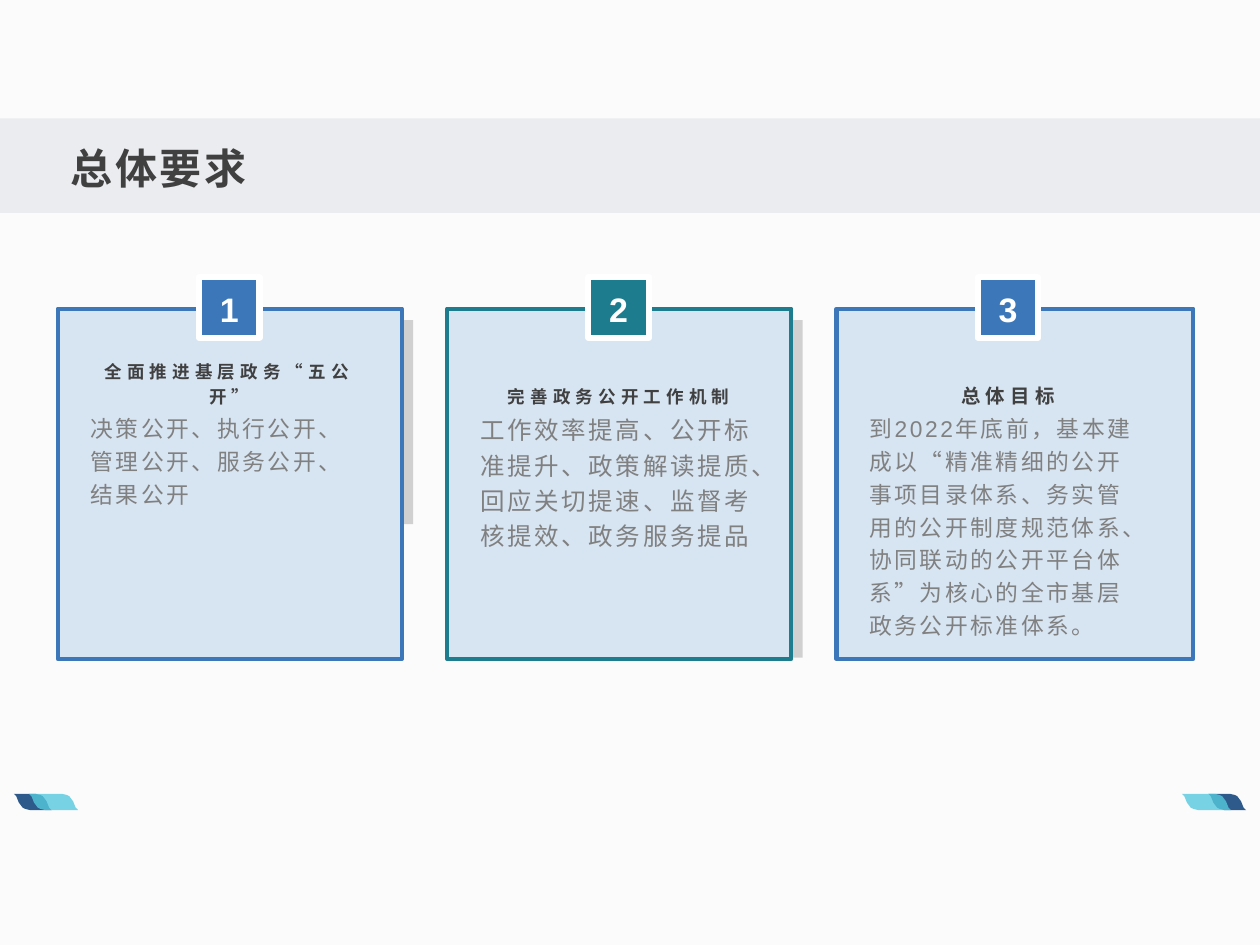
"""Build the slide on general requirements with three numbered cards."""
from lxml import etree
from pptx import Presentation
from pptx.dml.color import RGBColor
from pptx.enum import shapes as kinds, text as txt
from pptx.oxml import ns
from pptx.util import Inches, Pt

PAPER = RGBColor(0xFB, 0xFB, 0xFC)
BAND = RGBColor(0xEA, 0xEC, 0xEF)
NAVY = RGBColor(0x2D, 0x5A, 0x8B)
CYAN = RGBColor(0x56, 0xC8, 0xDD)
SHADE = RGBColor(0xBF, 0xBF, 0xBF)
PALE = RGBColor(0xD7, 0xE4, 0xF2)
BLUE = RGBColor(0x3C, 0x78, 0xB9)
TEAL = RGBColor(0x1D, 0x7D, 0x8E)
WHITE = RGBColor(0xFF, 0xFF, 0xFF)
DARK = RGBColor(0x40, 0x40, 0x40)
GRAY = RGBColor(0x80, 0x80, 0x80)

LEFT, MID = txt.PP_ALIGN.LEFT, txt.PP_ALIGN.CENTER
TOP, LOW = txt.MSO_ANCHOR.TOP, txt.MSO_ANCHOR.BOTTOM

deck = Presentation()
deck.slide_width, deck.slide_height = Inches(10), Inches(7.5)
slide = deck.slides.add_slide(deck.slide_layouts[6])
slide.background.fill.solid()
slide.background.fill.fore_color.rgb = PAPER


def paint(shape, fill, line=None, width=0, alpha=100):
    shape.shadow.inherit = False
    shape.fill.solid()
    shape.fill.fore_color.rgb = fill
    if alpha < 100:
        tint = shape.fill._xPr.find(".//" + ns.qn("a:srgbClr"))
        etree.SubElement(tint, ns.qn("a:alpha"), val=str(alpha * 1000))
    if line is None:
        shape.line.fill.background()
    else:
        shape.line.color.rgb = line
        shape.line.width = Pt(width)


def write(words, box, size, color, bold=False, align=LEFT, anchor=TOP,
          gap=0, lead=1.0, pad=(0.07, 0.04, 0.07, 0.04)):
    frame = slide.shapes.add_textbox(*map(Inches, box)).text_frame
    frame.word_wrap = True
    frame.vertical_anchor = anchor
    (frame.margin_left, frame.margin_top,
     frame.margin_right, frame.margin_bottom) = map(Inches, pad)
    para = frame.paragraphs[0]
    para.alignment, para.line_spacing = align, lead
    run = para.add_run()
    run.text = words
    font = run.font
    font.name, font.size, font.bold = "Arial", Pt(size), bold
    font.color.rgb = color
    props = run._r.get_or_add_rPr()
    props.set("lang", "zh-CN")
    props.set("spc", str(int(gap * 100)))


RECT = kinds.MSO_SHAPE.RECTANGLE
band = slide.shapes.add_shape(RECT, 0, Inches(0.94), Inches(10), Inches(0.75))
paint(band, BAND)

edge = [(0, 0), (0.02, 0.02), (0.04, 0.07), (0.07, 0.11), (0.09, 0.12), (0.13, 0.13)]
leaves = [(0.11, 0.3, NAVY, 100), (0.23, 0.39, CYAN, 80),
          (9.59, 0.3, NAVY, 100), (9.38, 0.39, CYAN, 80)]
for x, wide, color, alpha in leaves:
    dots = [(x + a, 6.3 + b) for a, b in edge]
    dots += [(x + wide - a, 6.43 - b) for a, b in edge]
    dots = [(Inches(a), Inches(b)) for a, b in dots]
    pen = slide.shapes.build_freeform(*dots[0])
    pen.add_line_segments(dots[1:])
    paint(pen.convert_to_shape(), color, alpha=alpha)

write("总体要求", (0.5, 1.06, 9, 0.5), 24, DARK, bold=True, anchor=LOW, gap=1.5,
      pad=(0.06, 0.03, 0.06, 0.03))

cards = [
    ("全面推进基层政务“五公开”", 10, "决策公开、执行公开、管理公开、服务公开、结果公开",
     13, BLUE, 2.73, 1.62),
    ("完善政务公开工作机制", 10,
     "工作效率提高、公开标准提升、政策解读提质、回应关切提速、监督考核提效、政务服务提品",
     14, TEAL, 2.73, 2.68),
    ("总体目标", 11.1,
     "到2022年底前，基本建成以“精准精细的公开事项目录体系、务实管用的公开制度规范体系、"
     "协同联动的公开平台体系”为核心的全市基层政务公开标准体系。",
     13, BLUE, 2.83, 1.62),
]
for i, (head, big, body, small, color, wide, tall) in enumerate(cards):
    x = 0.46 + 3.09 * i
    layers = [((x + 0.1, 2.54, 2.72, tall), SHADE, None, 0, 70),
              ((x, 2.45, wide, 2.78), PALE, color, 2.5, 100),
              ((x + 1.12, 2.2, 0.48, 0.48), color, WHITE, 3.5, 100)]
    for box, *style in layers:
        paint(slide.shapes.add_shape(RECT, *map(Inches, box)), *style)
    write(str(i + 1), (x + 1.17, 2.22, 0.38, 0.43), 19.4, WHITE, bold=True,
          align=MID, lead=1.1)
    write(body, (x + 0.19, 3.25, 2.34, 0.57), small, GRAY, gap=1.5, lead=1.2,
          pad=(0.07, 0, 0.07, 0.04))
    write(head, (x + 0.19, 2.88, 2.34, 0.35), big, DARK, bold=True, align=MID,
          anchor=LOW, gap=3, lead=1.2, pad=(0.07, 0.04, 0.07, 0))

deck.save("out.pptx")
